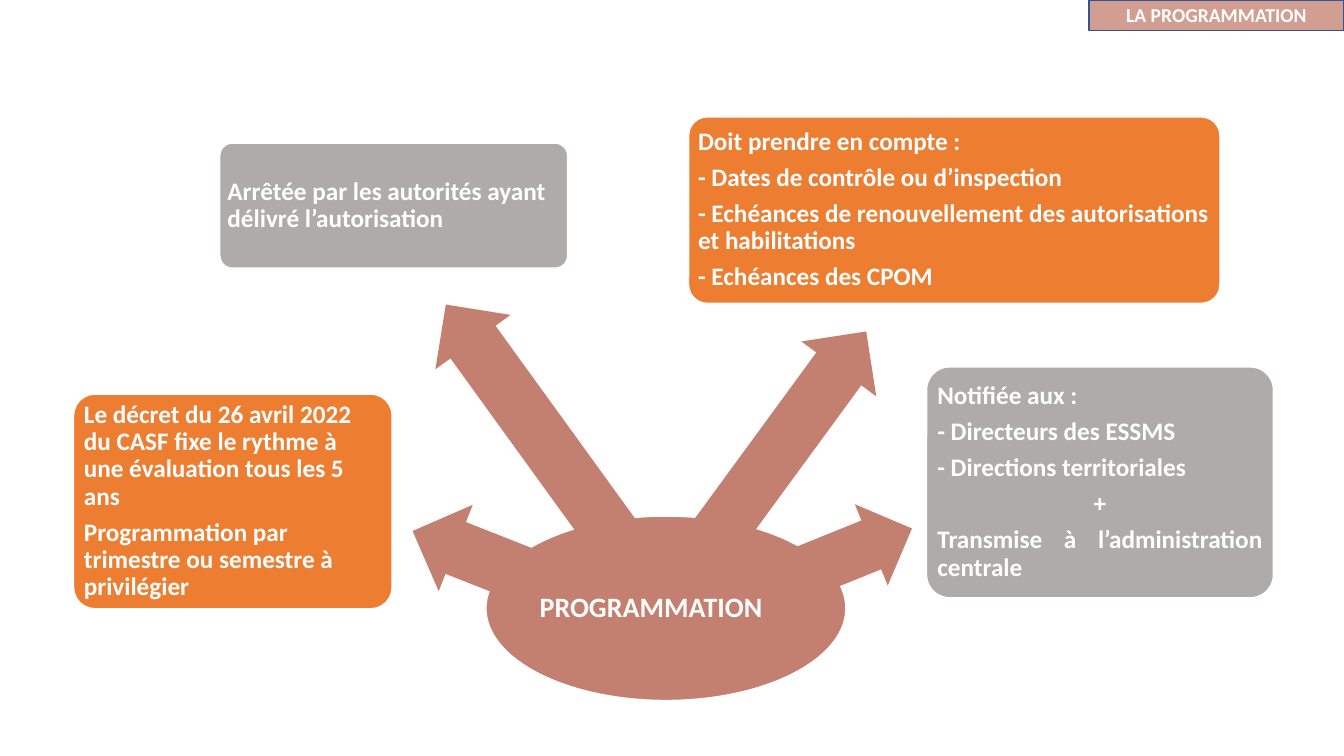
from dataclasses import dataclass

from pptx import Presentation
from pptx.dml.color import RGBColor
from pptx.enum.shapes import MSO_SHAPE as Shape
from pptx.enum.text import MSO_ANCHOR as Anchor, MSO_AUTO_SIZE as AutoSize, PP_ALIGN as Align
from pptx.util import Emu, Pt

PX = 9144  # 100 px to the inch


@dataclass(frozen=True)
class Theme:
    font: str = "Calibri"
    white: str = "FFFFFF"
    hub: str = "C37F6F"
    orange: str = "ED7D31"
    grey: str = "AFABAB"
    tag: str = "D29E92"
    tag_line: str = "325491"
    tag_size: int = 14
    card_size: int = 18
    hub_size: int = 20


@dataclass(frozen=True)
class Branch:
    card: tuple      # left, top, width, height inside the fan
    colour: str
    lines: tuple     # (wording, alignment)
    arrow: tuple     # left, top, width, height inside the fan
    angle: float


THEME = Theme()

BRANCHES = (
    Branch((0, 275, 316, 213), THEME.orange,
           (("Le décret du 26 avril 2022 du CASF fixe le rythme à une évaluation tous les 5 ans", Align.LEFT),
            ("Programmation par trimestre ou semestre à privilégier", Align.LEFT)),
           (332, 387, 121, 92), 21.5),
    Branch((145, 26, 345, 124), THEME.grey,
           (("Arrêtée par les autorités ayant délivré l’autorisation", Align.LEFT),),
           (310, 256, 286, 92), 54.1),
    Branch((610, 0, 527, 185), THEME.orange,
           (("Doit prendre en compte :", Align.LEFT),
            ("- Dates de contrôle ou d’inspection", Align.LEFT),
            ("- Echéances de renouvellement des autorisations et habilitations", Align.LEFT),
            ("- Echéances des CPOM", Align.LEFT)),
           (569, 277, 273, 92), 126.2),
    Branch((846, 248, 344, 229), THEME.grey,
           (("Notifiée aux :", Align.LEFT),
            ("- Directeurs des ESSMS", Align.LEFT),
            ("- Directions territoriales", Align.LEFT),
            ("+", Align.CENTER),
            ("Transmise à l’administration centrale", Align.JUSTIFY)),
           (712, 388, 124, 87), 158),
)


def px(length):
    return Emu(length * PX)


def paint(part, fill, line=None):
    part.shadow.inherit = False
    part.fill.solid()
    part.fill.fore_color.rgb = RGBColor.from_string(fill)
    if line:
        part.line.color.rgb = RGBColor.from_string(line)
        part.line.width = Pt(1)
    else:
        part.line.fill.background()


def add_part(slide, preset, box, origin, fill, line=None):
    left, top, width, height = box
    part = slide.shapes.add_shape(
        preset, px(origin[0] + left), px(origin[1] + top), px(width), px(height))
    paint(part, fill, line)
    return part


def add_run(paragraph, wording, size):
    run = paragraph.add_run()
    run.text = wording
    run.font.name = THEME.font
    run.font.size = Pt(size)
    run.font.bold = True
    run.font.color.rgb = RGBColor.from_string(THEME.white)


def write_lines(part, lines, size, inset):
    frame = part.text_frame
    frame.word_wrap = True
    frame.vertical_anchor = Anchor.MIDDLE
    frame.margin_left = frame.margin_right = px(inset)
    frame.margin_top = frame.margin_bottom = px(inset)
    for index, (wording, alignment) in enumerate(lines):
        paragraph = frame.add_paragraph() if index else frame.paragraphs[0]
        paragraph.alignment = alignment
        paragraph.line_spacing = 0.9
        paragraph.space_after = Pt(0.35 * size)
        add_run(paragraph, wording, size)


def section_tag(slide, box):
    """Section title in the top right corner."""
    title = slide.shapes.title
    title.left, title.top, title.width, title.height = map(px, box)
    paint(title, THEME.tag, THEME.tag_line)
    frame = title.text_frame
    frame.auto_size = AutoSize.NONE
    frame.word_wrap = True
    frame.vertical_anchor = Anchor.MIDDLE
    heading = frame.paragraphs[0]
    heading.alignment = Align.CENTER
    heading.line_spacing = 1.0
    heading.space_before = Pt(0)
    add_run(heading, "LA PROGRAMMATION", THEME.tag_size)


def programme_fan(slide, origin):
    """Central ellipse with an arrow towards each card."""
    hub = add_part(slide, Shape.OVAL, (409, 396, 357, 183), origin, THEME.hub, THEME.white)
    write_lines(hub, (("PROGRAMMATION", Align.LEFT),), THEME.hub_size, 1)

    for branch in BRANCHES:
        # Arrow
        arrow = add_part(slide, Shape.LEFT_ARROW, branch.arrow, origin, THEME.hub)
        arrow.adjustments[0] = 0.6
        arrow.adjustments[1] = 0.5
        arrow.rotation = branch.angle
        # Card
        card = add_part(slide, Shape.ROUNDED_RECTANGLE, branch.card, origin,
                        branch.colour, THEME.white)
        card.adjustments[0] = 0.1
        write_lines(card, branch.lines, THEME.card_size, 4)


def main():
    deck = Presentation()
    deck.slide_width, deck.slide_height = px(1333), px(750)
    slide = deck.slides.add_slide(deck.slide_layouts[5])
    section_tag(slide, (1080, 0, 253, 30))
    programme_fan(slide, (73, 116))
    deck.save("out.pptx")


if __name__ == "__main__":
    main()
